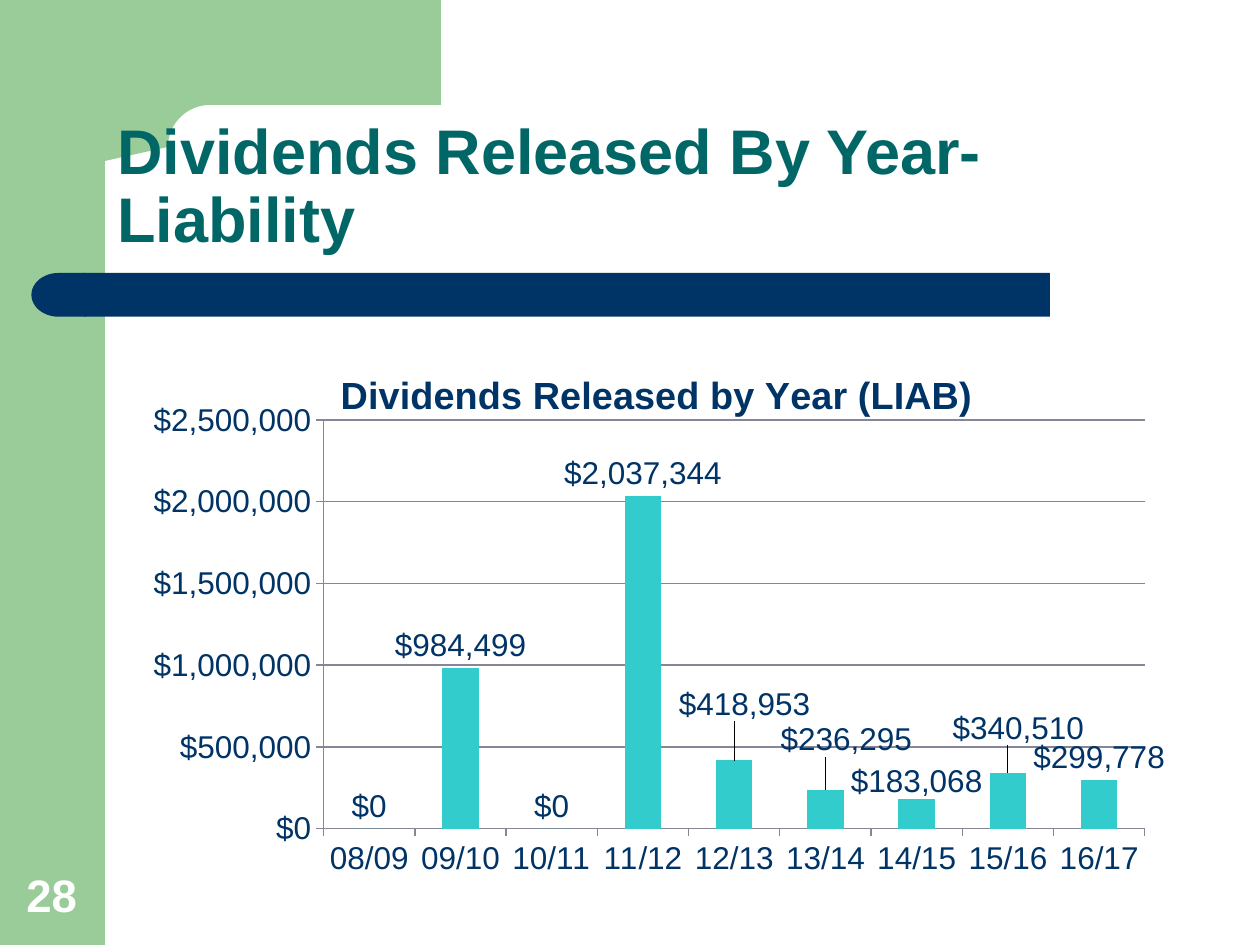
import math
import lxml.etree
import pptx
import pptx.chart.data
import pptx.dml.color
import pptx.enum.chart
import pptx.enum.shapes
import pptx.enum.text
import pptx.oxml
import pptx.oxml.ns
import pptx.util

Pt = pptx.util.Pt
Shape = pptx.enum.shapes.MSO_SHAPE
Anchor = pptx.enum.text.MSO_ANCHOR
Align = pptx.enum.text.PP_ALIGN
qn = pptx.oxml.ns.qn

THEME = {
    "font": "Arial", "green": "99CC99", "navy": "003366", "teal": "006666",
    "bar": "33CCCC", "grid": "868696", "white": "FFFFFF",
    "head": 36, "page": 26, "title": 21.6, "body": 18,
}
HEAD = "Dividends Released By Year-\nLiability"
PAGE = "28"
TITLE = "Dividends Released by Year (LIAB) "
MONEY = '"$"#,##0'
DATA = [
    ("08/09", 0), ("09/10", 984499), ("10/11", 0),
    ("11/12", 2037344), ("12/13", 418953), ("13/14", 236295),
    ("14/15", 183068), ("15/16", 340510), ("16/17", 299778),
]
# Label shifts by point, as shares of the chart's width and height
SHIFTS = {4: (0.01, -0.06), 5: (0.02, -0.05), 6: (0, 0.01), 7: (0.01, -0.04)}
PLOT = {"x": 0.18, "y": 0.15, "w": 0.79, "h": 0.73}


def color(name):
    return pptx.dml.color.RGBColor.from_string(THEME[name])


def style(font, size, hue, bold=False):
    font.name = THEME["font"]
    font.size = Pt(THEME[size])
    font.bold = bold
    font.color.rgb = color(hue)


def paint(shape, hue):
    shape.shadow.inherit = False
    shape.fill.solid()
    shape.fill.fore_color.rgb = color(hue)
    shape.line.fill.background()


def block(slide, kind, box, hue):
    shape = slide.shapes.add_shape(kind, *map(Pt, box))
    paint(shape, hue)
    return shape


def write(slide, text, box, size, hue, align=Align.LEFT, space=1.0):
    frame = slide.shapes.add_textbox(*map(Pt, box)).text_frame
    frame.word_wrap = True
    frame.vertical_anchor = Anchor.BOTTOM
    par = frame.paragraphs[0]
    par.text = text.replace("\n", "\v")
    par.alignment = align
    par.line_spacing = space
    for run in par.runs:
        style(run.font, size, hue, bold=True)


def corner(slide):
    """Draw the top band, with a rounded inner corner."""
    mid, rad = (120, 84), 24
    arc = [(mid[0] - rad * math.sin(a), mid[1] - rad * math.cos(a))
           for a in (math.radians(d) for d in range(0, 91, 6))]
    pts = [(252, 0), (252, 60), *arc, (60, 92), (36, 92), (36, 0)]
    pen = slide.shapes.build_freeform(Pt(pts[0][0]), Pt(pts[0][1]))
    pen.add_line_segments([(Pt(x), Pt(y)) for x, y in pts[1:]])
    paint(pen.convert_to_shape(), "green")


def layout(vals, inner=False):
    """Make a manual chart layout from shares of the chart's size."""
    root = pptx.oxml.parse_xml(
        '<c:layout xmlns:c="http://schemas.openxmlformats.org/'
        'drawingml/2006/chart"><c:manualLayout/></c:layout>')
    items = [("layoutTarget", "inner")] if inner else []
    if inner or vals.pop("edge", False):
        items += [("xMode", "edge"), ("yMode", "edge")]
    for tag, val in items + list(vals.items()):
        lxml.etree.SubElement(root[0], qn("c:" + tag)).set("val", str(val))
    return root


def place(node, prev, new):
    """Put a layout after the child named prev, or first if there is none."""
    for old in node.findall(qn("c:layout")):
        node.remove(old)
    spot = node.find(qn(prev)) if prev else None
    node.insert(0 if spot is None else node.index(spot) + 1, new)


def graph(slide):
    data = pptx.chart.data.CategoryChartData(number_format=MONEY)
    data.categories = [year for year, _ in DATA]
    data.add_series(TITLE, [val for _, val in DATA])
    kind = pptx.enum.chart.XL_CHART_TYPE.COLUMN_CLUSTERED
    chart = slide.shapes.add_chart(
        kind, Pt(78), Pt(192), Pt(594), Pt(320), data).chart
    chart.has_legend = False
    style(chart.font, "body", "navy")

    chart.has_title = True
    par = chart.chart_title.text_frame.paragraphs[0]
    par.text = TITLE
    style(par.runs[0].font, "title", "navy", bold=True)
    head = chart.chart_title._element
    place(head, "c:tx", layout({"edge": True, "x": 0.19, "y": 0.05}))

    for axis in (chart.category_axis, chart.value_axis):
        axis.format.line.color.rgb = color("grid")
        axis.major_tick_mark = pptx.enum.chart.XL_TICK_MARK.OUTSIDE
        style(axis.tick_labels.font, "body", "navy")
    axis = chart.value_axis
    axis.minimum_scale, axis.maximum_scale = 0, 2500000
    axis.major_unit = 500000
    axis.major_gridlines.format.line.color.rgb = color("grid")
    axis.tick_labels.number_format = MONEY
    axis.tick_labels.number_format_is_linked = False

    plot = chart.plots[0]
    plot.gap_width = 150
    plot.vary_by_categories = False
    place(plot._element.getparent(), None, layout(PLOT, inner=True))
    bars = plot.series[0]
    bars.format.fill.solid()
    bars.format.fill.fore_color.rgb = color("bar")

    spot = pptx.enum.chart.XL_LABEL_POSITION.OUTSIDE_END
    tags = bars.data_labels
    tags.show_value = True
    tags.number_format = MONEY
    tags.number_format_is_linked = False
    tags.position = spot
    style(tags.font, "body", "navy")
    for num, (dx, dy) in SHIFTS.items():
        tag = bars.points[num].data_label
        style(tag.font, "body", "navy")
        tag.position = spot
        node = tags._element.find(f"{qn('c:dLbl')}[{len(tags._element.findall(qn('c:dLbl')))}]")
        place(node, "c:idx", layout({"x": dx, "y": dy}))


def main():
    deck = pptx.Presentation()
    deck.slide_width, deck.slide_height = Pt(720), Pt(540)
    slide = deck.slides.add_slide(deck.slide_layouts[6])
    block(slide, Shape.RECTANGLE, (0, 0, 60, 540), "green")
    corner(slide)
    block(slide, Shape.RECTANGLE, (48, 156, 552, 25), "navy")
    cap = block(slide, Shape.FLOWCHART_DELAY, (18, 156, 31, 25), "navy")
    cap._element.spPr.find(qn("a:xfrm")).set("flipH", "1")
    write(slide, HEAD, (60, 60, 660, 90), "head", "teal", space=0.9)
    write(slide, PAGE, (6.5, 492, 46, 38), "page", "white", Align.CENTER)
    graph(slide)
    deck.save("out.pptx")


if __name__ == "__main__":
    main()
